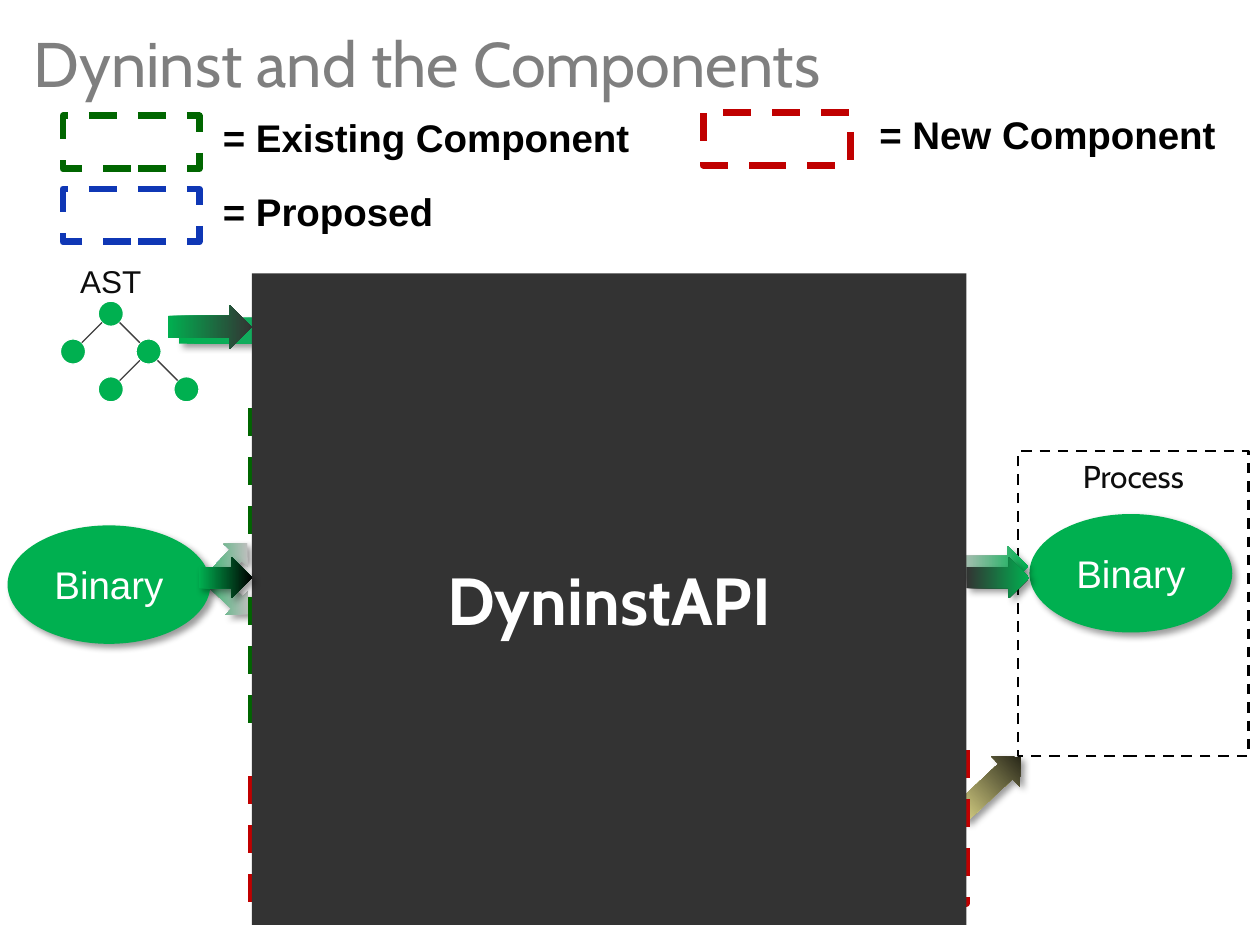
import pptx
import pptx.util
import pptx.dml.color
import pptx.enum.dml
import pptx.enum.shapes
import pptx.enum.text
import pptx.oxml
import lxml.etree

Inches = pptx.util.Inches
Pt = pptx.util.Pt
RGBColor = pptx.dml.color.RGBColor
SHAPE = pptx.enum.shapes.MSO_SHAPE
ANCHOR = pptx.enum.text.MSO_ANCHOR
ALIGN = pptx.enum.text.PP_ALIGN
DASH = pptx.enum.dml.MSO_LINE.DASH

BLACK = RGBColor(0x00, 0x00, 0x00)
WHITE = RGBColor(0xFF, 0xFF, 0xFF)
TITLE_GRAY = RGBColor(0x7F, 0x7F, 0x7F)
INK = RGBColor(0x0D, 0x0D, 0x0D)
EDGE_GRAY = RGBColor(0x40, 0x40, 0x40)
CORE_GRAY = RGBColor(0x33, 0x33, 0x33)
SILVER = RGBColor(0xBF, 0xBF, 0xBF)
GREEN = RGBColor(0x00, 0xB0, 0x50)
EXISTING = RGBColor(0x00, 0x66, 0x00)
NEW = RGBColor(0xC0, 0x00, 0x00)
PROPOSED = RGBColor(0x0F, 0x37, 0xB5)
PURPLE = RGBColor(0x9C, 0x85, 0xC0)
YELLOW = RGBColor(0xFD, 0xF6, 0x9C)

DRAWING_NS = "http://schemas.openxmlformats.org/drawingml/2006/main"
SHADOW_XML = (
    f'<a:effectLst xmlns:a="{DRAWING_NS}">'
    '<a:outerShdw blurRad="50800" dist="38100" dir="2700000" algn="tl" rotWithShape="0">'
    '<a:srgbClr val="000000"><a:alpha val="40000"/></a:srgbClr>'
    '</a:outerShdw></a:effectLst>'
)


def write(frame, text, size, font, color, bold=False, align=ALIGN.LEFT,
          anchor=ANCHOR.TOP, wrap=True):
    frame.word_wrap = wrap
    frame.vertical_anchor = anchor
    para = frame.paragraphs[0]
    para.text = text
    para.alignment = align
    para.font.size = Pt(size)
    para.font.name = font
    para.font.bold = bold
    para.font.color.rgb = color


def add_label(page, box, text, size, font, color, **style):
    label = page.shapes.add_textbox(*map(Inches, box))
    write(label.text_frame, text, size, font, color, **style)


def add_block(page, kind, box, fill=None, shadow=False):
    """Add a preset shape without a line; no fill colour leaves it hollow."""
    block = page.shapes.add_shape(kind, *map(Inches, box))
    block.line.fill.background()
    if fill is None:
        block.fill.background()
    else:
        block.fill.solid()
        block.fill.fore_color.rgb = fill
    block.shadow.inherit = False
    if shadow:
        properties = block._element.spPr
        properties.remove(properties.find(f"{{{DRAWING_NS}}}effectLst"))
        properties.append(pptx.oxml.parse_xml(SHADOW_XML))
    return block


def add_dashed_box(page, box, color, width=4):
    frame = add_block(page, SHAPE.RECTANGLE, box)
    frame.line.color.rgb = color
    frame.line.width = Pt(width)
    frame.line.dash_style = DASH
    return frame


def add_arrow(page, box, start, end, kind=SHAPE.RIGHT_ARROW, rotation=0,
              first_stop=0, angle=0, shadow=True):
    """Add an arrow whose fill blends from the start to the end colour."""
    arrow = add_block(page, kind, box, start, shadow)
    arrow.rotation = rotation
    arrow.fill.gradient()
    arrow.fill.gradient_angle = angle
    for stop, color, position in zip(arrow.fill.gradient_stops, (start, end), (first_stop, 1)):
        stop.color.rgb = color
        stop.position = position
    return arrow


def add_binary(page, box):
    binary = add_block(page, SHAPE.OVAL, box, GREEN, shadow=True)
    write(binary.text_frame, "Binary", 22, "Arial", WHITE,
          align=ALIGN.CENTER, anchor=ANCHOR.MIDDLE, wrap=False)


def add_syntax_tree(page, left, top):
    """Draw the AST label and its tree, whose nodes lie on a 0.3 inch grid."""
    step, diameter, reach = 0.3, 0.2, 0.07
    nodes = [(1, 0), (2, 1), (0, 1), (1, 2), (3, 2)]
    edges = [(0, 2), (0, 1), (1, 3), (1, 4)]
    tree_top = top + 0.31
    centers = [(left + column * step + diameter / 2, tree_top + row * step + diameter / 2)
               for column, row in nodes]
    for x, y in centers:
        node = add_block(page, SHAPE.OVAL,
                         (x - diameter / 2, y - diameter / 2, diameter, diameter), GREEN)
        node.line.color.rgb = WHITE
        node.line.width = Pt(0.75)
    for parent, child in edges:
        (x1, y1), (x2, y2) = centers[parent], centers[child]
        side = reach if x2 > x1 else -reach
        edge = page.shapes.add_connector(
            pptx.enum.shapes.MSO_CONNECTOR.STRAIGHT,
            *map(Inches, (x1 + side, y1 + reach, x2 - side, y2 - reach)))
        edge.line.color.rgb = EDGE_GRAY
        edge.line.width = Pt(0.75)
        lxml.etree.SubElement(edge._element.spPr, f"{{{DRAWING_NS}}}effectLst")
    label_width = 0.9
    add_label(page, (centers[0][0] - label_width / 2, top, label_width, 0.3), "AST",
              18, "Arial", INK, align=ALIGN.CENTER, anchor=ANCHOR.MIDDLE)


def add_process(page, left, top, width, height):
    add_binary(page, (left + 0.09, top + 0.5, 1.61, 0.94))
    process = add_dashed_box(page, (left, top, width, height), BLACK, 1.5)
    write(process.text_frame, "Process", 18, "Cabin", INK, align=ALIGN.CENTER)


def add_legend_entry(page, left, top, swatch_width, text, text_left, text_width, color):
    add_dashed_box(page, (left, top, swatch_width, 0.42), color)
    add_label(page, (text_left, top - 0.06, text_width, 0.47), text, 22, "Arial", BLACK, bold=True)


def add_legend(page):
    add_legend_entry(page, 0.5, 0.92, 1.08, "= Existing Component", 1.67, 4.08, EXISTING)
    add_legend_entry(page, 5.58, 0.89, 1.17, "= New Component", 6.88, 3.12, NEW)
    add_legend_entry(page, 0.5, 1.5, 1.08, "= Proposed", 1.67, 3.12, PROPOSED)


def add_component_flow(page):
    """Place the component arrows that reach past the core block."""
    add_arrow(page, (1.61, 4.33, 0.53, 0.53), SILVER, GREEN, SHAPE.LEFT_UP_ARROW,
              rotation=133.4, first_stop=0.37, angle=315)
    tree_arrow = add_arrow(page, (1.42, 2.42, 4.75, 0.41), GREEN, PURPLE)
    tree_arrow.adjustments[1] = 0.84
    add_arrow(page, (7.58, 4.33, 0.58, 0.33), SILVER, GREEN)
    add_arrow(page, (7.53, 6.07, 0.66, 0.33), YELLOW, BLACK, rotation=316.9)


def add_component_outlines(page):
    for top, color in ((3.23, EXISTING), (4.73, EXISTING), (6.15, NEW)):
        add_dashed_box(page, (2, top, 1.37, 1.1), color)
    add_dashed_box(page, (6.22, 5.9, 1.45, 1.27), NEW)


def add_core(page, left, top, width, height):
    core = add_block(page, SHAPE.RECTANGLE, (left, top, width, height), CORE_GRAY)
    write(core.text_frame, "DyninstAPI", 38, "Cabin", WHITE, bold=True,
          align=ALIGN.CENTER, anchor=ANCHOR.MIDDLE)
    arrow_top = top + 2.25
    add_arrow(page, (left - 0.42, arrow_top, 0.42, 0.33), GREEN, BLACK)
    add_arrow(page, (left + width, arrow_top, 0.5, 0.33), CORE_GRAY, GREEN)
    add_arrow(page, (left - 0.67, top + 0.25, 0.67, 0.35), GREEN, CORE_GRAY, shadow=False)


def main():
    deck = pptx.Presentation()
    deck.slide_width, deck.slide_height = Inches(10), Inches(7.5)
    page = deck.slides.add_slide(deck.slide_layouts[6])
    add_label(page, (0.17, 0.08, 9.67, 0.83), "Dyninst and the Components",
              36, "Cabin", TITLE_GRAY, anchor=ANCHOR.MIDDLE)
    add_syntax_tree(page, 0.48, 2.08)
    add_process(page, 8.08, 3.58, 1.83, 2.42)
    add_component_flow(page)
    add_binary(page, (0.06, 4.17, 1.61, 0.94))
    add_legend(page)
    add_component_outlines(page)
    add_core(page, 2, 2.17, 5.67, 5.17)
    deck.save("out.pptx")


if __name__ == "__main__":
    main()
